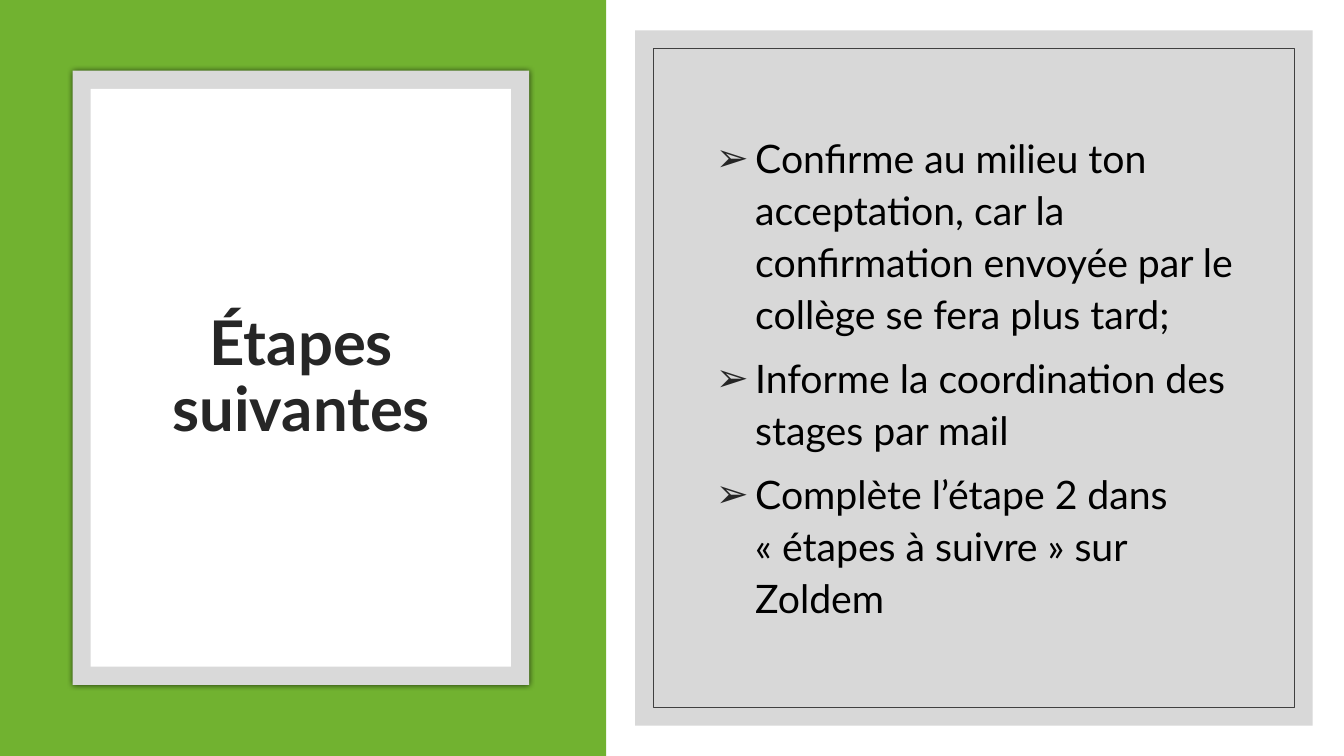
from dataclasses import dataclass
from typing import Optional

from lxml.etree import SubElement as Sub
from pptx import Presentation as Deck
from pptx.dml.color import RGBColor as Rgb
from pptx.enum.shapes import MSO_SHAPE as Kind
from pptx.enum.text import MSO_ANCHOR as Anchor, MSO_AUTO_SIZE as Fit, PP_ALIGN as Align
from pptx.oxml.ns import qn
from pptx.util import Inches, Pt

CELL = 0.18
COLS, ROWS = 74.06, 41.67
FONT = "Lato"
HARD = chr(160)
HUES = {
    "white": "FFFFFF",
    "green": "71B230",
    "mount": "D9D9D9",
    "card": "BFBFBF",
    "rim": "404040",
    "title": "262626",
    "text": "000000",
}
STEPS = [
    "Confirme au milieu ton acceptation, car la confirmation envoyée par le collège se fera plus tard;",
    "Informe la coordination des stages par mail",
    f"Complète l’étape 2 dans «{HARD}étapes à suivre{HARD}» sur Zoldem",
]


@dataclass(frozen=True)
class Box:
    col: float
    row: float
    wide: float
    high: float

    def inset(self, gap: float = 1) -> "Box":
        return Box(self.col + gap, self.row + gap, self.wide - 2 * gap, self.high - 2 * gap)

    def spans(self) -> list[int]:
        return [Inches(n * CELL) for n in (self.col, self.row, self.wide, self.high)]


@dataclass(frozen=True)
class Panel:
    box: Box
    fill: Optional[str] = None
    line: Optional[str] = None
    clear: Optional[int] = None
    glow: bool = False


MOUNT = Box(4, 3.9, 25.15, 33.85)
CARD = Box(35, 1.67, 37.33, 38.33)
LEFT = [
    Panel(Box(0, 0, COLS, ROWS), "white"),
    Panel(Box(0, 0, 33.4, ROWS), "green"),
    Panel(MOUNT, "mount", glow=True),
    Panel(MOUNT.inset(), "white"),
]
RIGHT = [
    Panel(CARD, "card", clear=60),
    Panel(CARD.inset(), line="rim"),
]


def hue(name: str) -> Rgb:
    return Rgb.from_string(HUES[name])


def fade(tint, share: int) -> None:
    Sub(tint, qn("a:alpha"), val=str(share * 1000))


def draw(slide, panel: Panel) -> None:
    shape = slide.shapes.add_shape(Kind.RECTANGLE, *panel.box.spans())
    shape.shadow.inherit = False
    if panel.fill:
        shape.fill.solid()
        shape.fill.fore_color.rgb = hue(panel.fill)
    else:
        shape.fill.background()
    if panel.line:
        shape.line.color.rgb = hue(panel.line)
        shape.line.width = Pt(0.5)
    else:
        shape.line.fill.background()
    if panel.clear:
        fade(shape.element.spPr.find(".//" + qn("a:srgbClr")), panel.clear)
    if panel.glow:
        effect = shape.element.spPr.find(qn("a:effectLst"))
        shade = Sub(effect, qn("a:outerShdw"), blurRad=str(Pt(4)), dist="0", dir="0")
        fade(Sub(shade, qn("a:srgbClr"), val=HUES["text"]), 66)


def mark(para) -> None:
    props = para._p.get_or_add_pPr()
    props.set("marL", str(Inches(0.39)))
    props.set("indent", str(-Inches(0.39)))
    tint = Sub(props, qn("a:buClr"))
    Sub(tint, qn("a:srgbClr"), val=HUES["title"])
    Sub(props, qn("a:buFont"), typeface="Arial")
    Sub(props, qn("a:buChar"), char="➢")


def write(shape, box: Box, lines: list[str], *, size: int, tint: str, bold: bool = False,
          align: Align = Align.LEFT, pitch: float = 1, lead: int = 0, bullet: bool = False) -> None:
    shape.left, shape.top, shape.width, shape.height = box.spans()
    frame = shape.text_frame
    frame.word_wrap = True
    frame.auto_size = Fit.NONE
    frame.vertical_anchor = Anchor.MIDDLE
    frame.text = "\n".join(lines)
    for para in frame.paragraphs:
        para.alignment = align
        para.line_spacing = pitch
        para.space_before = Pt(lead)
        para.space_after = Pt(0)
        if bullet:
            mark(para)
        font = para.runs[0].font
        font.name, font.size, font.bold = FONT, Pt(size), bold
        font.color.rgb = hue(tint)
    shape.element.getparent().append(shape.element)


def main() -> None:
    deck = Deck()
    deck.slide_width, deck.slide_height = Inches(13.33), Inches(7.5)
    slide = deck.slides.add_slide(deck.slide_layouts[1])
    title, body = slide.placeholders
    for panel in LEFT:
        draw(slide, panel)
    write(title, Box(6, 7.22, 21.22, 27.28), ["Étapes suivantes"],
          size=44, tint="title", bold=True, align=Align.CENTER, pitch=0.9)
    for panel in RIGHT:
        draw(slide, panel)
    write(body, Box(38.89, 5.67, 29.61, 30.05), STEPS,
          size=28, tint="text", pitch=1.1, lead=9, bullet=True)
    deck.save("out.pptx")


if __name__ == "__main__":
    main()
